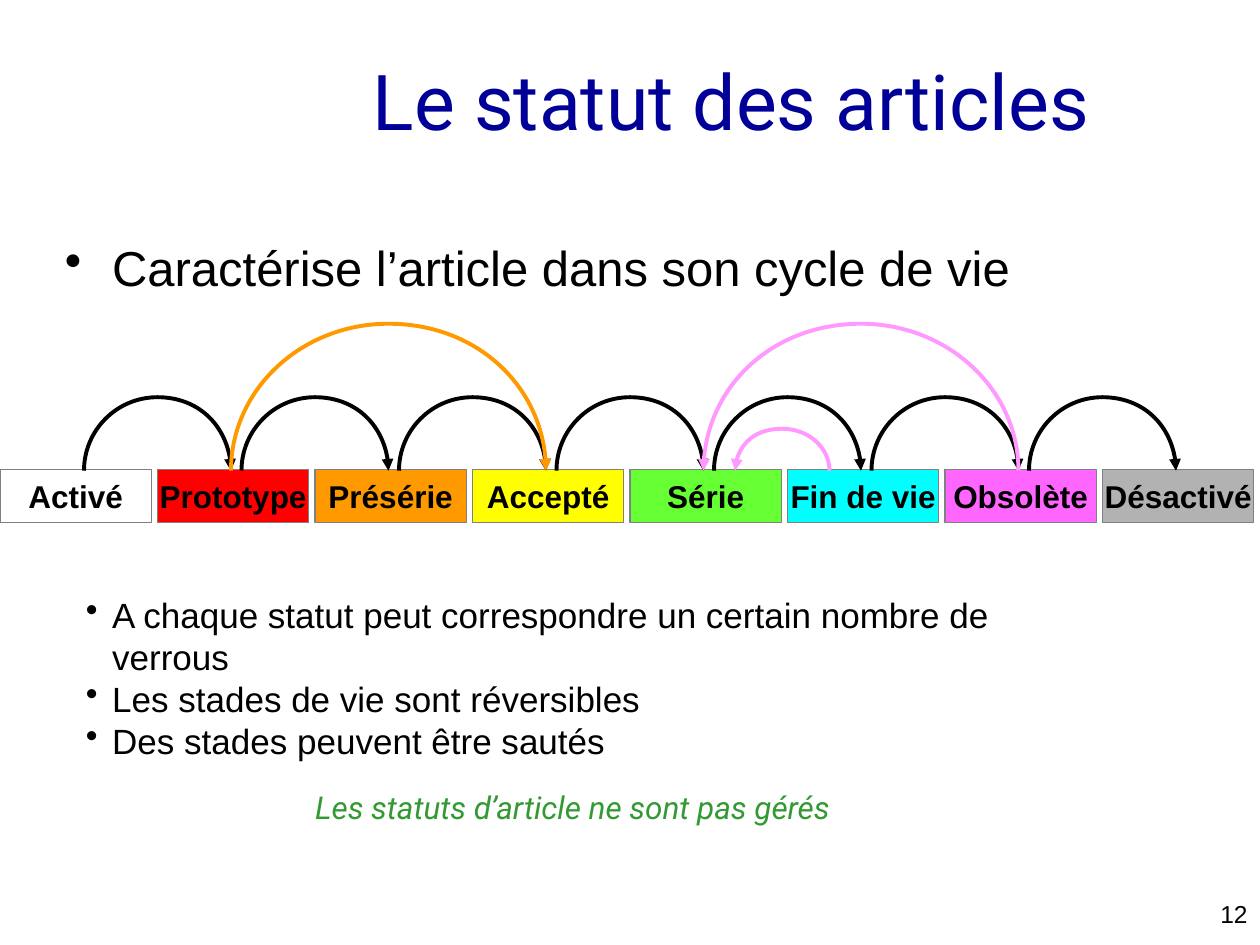
from dataclasses import dataclass

from lxml.etree import SubElement
from pptx import Presentation
from pptx.dml.color import RGBColor
from pptx.enum.shapes import MSO_SHAPE
from pptx.enum.text import MSO_ANCHOR, PP_ALIGN
from pptx.oxml.ns import qn
from pptx.util import Pt


@dataclass(frozen=True)
class Theme:
    sans: str = "Arial"
    display: str = "Roboto"
    ink: str = "000000"
    title: str = "000099"
    note: str = "339933"
    border: str = "808080"
    skip: str = "FF9900"
    back: str = "FF99FF"
    title_size: int = 44
    lead_size: int = 28
    list_size: int = 20
    label_size: int = 18
    number_size: int = 14


THEME = Theme()
STATUSES = {
    "Activé": "FFFFFF",
    "Prototype": "FF0000",
    "Présérie": "FF9900",
    "Accepté": "FFFF00",
    "Série": "66FF33",
    "Fin de vie": "00FFFF",
    "Obsolète": "FF66FF",
    "Désactivé": "B2B2B2",
}
RULES = [
    "A chaque statut peut correspondre un certain nombre de verrous",
    "Les stades de vie sont réversibles",
    "Des stades peuvent être sautés",
]
PITCH = 90
CURVE = 0.5523  # control point distance of a quarter ellipse


def write(frame, lines, size, color=THEME.ink, name=THEME.sans, indent=0,
          paragraph=None, **font):
    """Fill a text frame; an indent above zero gives bulleted lines."""
    for index, line in enumerate(lines):
        para = frame.paragraphs[0] if index == 0 else frame.add_paragraph()
        for key, value in (paragraph or {}).items():
            setattr(para, key, value)
        if indent:
            properties = para._p.get_or_add_pPr()
            properties.set("marL", str(Pt(indent)))
            properties.set("indent", str(-Pt(indent)))
            SubElement(properties, qn("a:buChar"), char="•")
        span = para.add_run()
        span.text = line
        for key, value in {"size": Pt(size), "name": name, **font}.items():
            setattr(span.font, key, value)
        span.font.color.rgb = RGBColor.from_string(color)


def add_text(page, box, lines, size, anchor=MSO_ANCHOR.TOP, **format_values):
    frame = page.shapes.add_textbox(*map(Pt, box)).text_frame
    frame.word_wrap = True
    frame.vertical_anchor = anchor
    write(frame, lines, size, **format_values)


def add_status(page, box, label, color):
    status = page.shapes.add_shape(MSO_SHAPE.RECTANGLE, *map(Pt, box))
    status.shadow.inherit = False
    status.fill.solid()
    status.fill.fore_color.rgb = RGBColor.from_string(color)
    status.line.color.rgb = RGBColor.from_string(THEME.border)
    status.line.width = Pt(0.75)
    frame = status.text_frame
    frame.word_wrap = False
    frame.vertical_anchor = MSO_ANCHOR.MIDDLE
    for side in ("left", "right", "top", "bottom"):
        setattr(frame, f"margin_{side}", 0)
    write(frame, [label], THEME.label_size, bold=True,
          paragraph={"alignment": PP_ALIGN.CENTER})


def add_arc(page, start, end, base, height, color):
    """Draw a half ellipse above the base line, with an arrowhead at its end."""
    middle, top = (start + end) / 2, base - height
    builder = page.shapes.build_freeform(Pt(start), Pt(base))
    builder.add_line_segments([(Pt(middle), Pt(top)), (Pt(end), Pt(base))], close=False)
    arc = builder.convert_to_shape()
    reach = (end - start) / 2 * CURVE
    controls = [
        [(start, base - height * CURVE), (middle - reach, top)],
        [(middle + reach, top), (end, base - height * CURVE)],
    ]
    segments = list(arc._element.iter(qn("a:lnTo")))
    for segment, points in zip(segments, controls):
        curve = segment.getparent().makeelement(qn("a:cubicBezTo"))
        for x, y in points:
            SubElement(curve, qn("a:pt"), x=str(Pt(x) - Pt(min(start, end))),
                       y=str(Pt(y) - Pt(top)))
        curve.append(segment[0])
        segment.getparent().replace(segment, curve)
    arc.shadow.inherit = False
    arc.fill.background()
    arc.line.color.rgb = RGBColor.from_string(color)
    arc.line.width = Pt(2.25)
    SubElement(arc.line._get_or_add_ln(), qn("a:tailEnd"), type="triangle")


def add_life_cycle(page, left, top, width, height):
    """Place the row of statuses and the transitions above it."""
    for index, (label, color) in enumerate(STATUSES.items()):
        add_status(page, (left + index * PITCH, top, width, height), label, color)
    transitions = [
        (48 + index * PITCH, 132 + index * PITCH, 42, THEME.ink)
        for index in range(len(STATUSES) - 1)
    ]
    transitions += [
        (474, 420, 24, THEME.back),
        (582, 402, 84, THEME.back),
        (132, 312, 84, THEME.skip),
    ]
    for start, end, rise, color in transitions:
        add_arc(page, left + start, left + end, top + 0.5, rise, color)


def build_page(page):
    right = {"alignment": PP_ALIGN.RIGHT}
    add_text(page, (570, 510, 150, 18), ["12"], THEME.number_size, paragraph=right)
    add_text(page, (18, 12, 612, 90), ["Le statut des articles"], THEME.title_size,
             MSO_ANCHOR.MIDDLE, color=THEME.title, name=THEME.display, paragraph=right)
    add_text(page, (30, 132, 642, 72), ["Caractérise l’article dans son cycle de vie"],
             THEME.lead_size, indent=27, paragraph={"space_before": Pt(4)})
    add_life_cycle(page, 0, 268.5, 86.5, 30)
    add_text(page, (42, 337, 594, 100), RULES, THEME.list_size, MSO_ANCHOR.MIDDLE,
             indent=15)
    add_text(page, (173, 446.5, 317, 29), ["Les statuts d’article ne sont pas gérés"],
             THEME.label_size, color=THEME.note, name=THEME.display, italic=True)


def main():
    deck = Presentation()
    deck.slide_width, deck.slide_height = Pt(720), Pt(540)
    build_page(deck.slides.add_slide(deck.slide_layouts[6]))
    deck.save("out.pptx")


if __name__ == "__main__":
    main()
